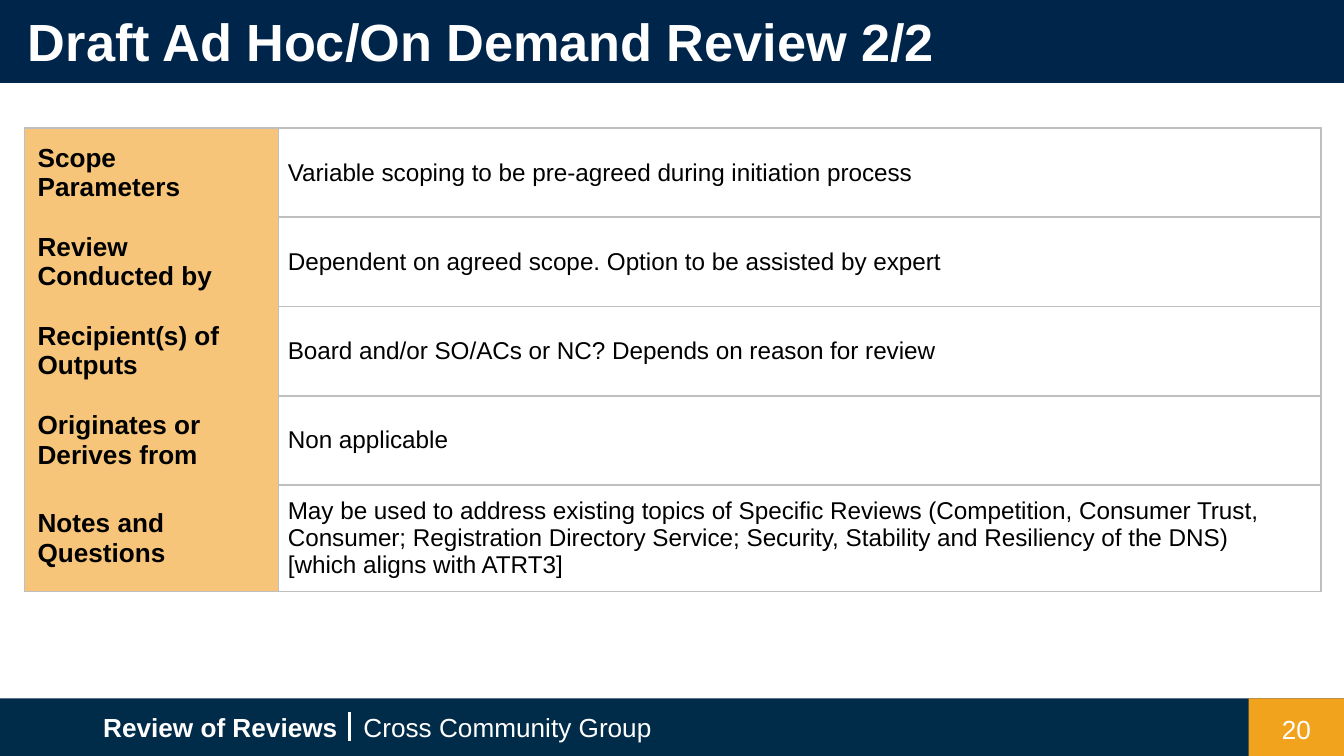
from dataclasses import dataclass

import pptx
import pptx.dml.color
import pptx.enum.shapes
import pptx.enum.text
import pptx.oxml
import pptx.oxml.ns
import pptx.util
from pptx.util import Cm

COLORS = {
    "header": "00254A",
    "footer": "002B49",
    "accent": "F1A31E",
    "label": "F7C579",
    "border": "BFBFBF",
    "white": "FFFFFF",
    "black": "000000",
}
FONT = "Arial"
MIDDLE = pptx.enum.text.MSO_ANCHOR.MIDDLE
LEFT = pptx.enum.text.PP_ALIGN.LEFT
CENTER = pptx.enum.text.PP_ALIGN.CENTER
PLAIN_TABLE = "{2D5ABB26-0587-4C30-8999-92F81FD0307C}"


@dataclass
class Band:
    x: float
    y: float
    w: float
    h: float
    color: str


@dataclass
class Label:
    x: float
    y: float
    w: float
    h: float
    text: str
    size: float = 14
    bold: bool = False
    align: int = LEFT


@dataclass
class Row:
    height: float
    label: str
    details: list[str]


BANDS = [
    Band(0, 13.2, 25.4, 1.1, "footer"),
    Band(23.6, 13.2, 1.8, 1.1, "accent"),
    Band(0, 0, 25.4, 1.57, "header"),
]
LABELS = [
    Label(1.7, 13.18, 5.08, 1.12, "Review of Reviews", bold=True),
    Label(6.62, 13.18, 6.38, 1.12, "Cross Community Group"),
    Label(23.6, 13.23, 1.8, 1.1, "20", align=CENTER),
    Label(0.28, 0, 24.97, 1.52, "Draft Ad Hoc/On Demand Review 2/2", 28, True),
]
ROWS = [
    Row(1.62, "Scope Parameters",
        ["Variable scoping to be pre-agreed during initiation process"]),
    Row(1.62, "Review Conducted by",
        ["Dependent on agreed scope. Option to be assisted by expert"]),
    Row(1.62, "Recipient(s) of Outputs",
        ["Board and/or SO/ACs or NC? Depends on reason for review"]),
    Row(1.62, "Originates or Derives from", ["Non applicable"]),
    Row(1.89, "Notes and Questions",
        ["May be used to address existing topics of Specific Reviews "
         "(Competition, Consumer Trust, Consumer; Registration Directory "
         "Service; Security, Stability and Resiliency of the DNS)",
         "[which aligns with ATRT3]"]),
]
COLUMNS = [4.8, 19.71]


def rgb(name: str) -> pptx.dml.color.RGBColor:
    return pptx.dml.color.RGBColor.from_string(COLORS[name])


def add_run(p, text: str, size: float, bold: bool, color: str) -> None:
    r = p.add_run()
    r.text = text
    r.font.name = FONT
    r.font.size = pptx.util.Pt(size)
    r.font.bold = bold
    r.font.color.rgb = rgb(color)


def draw_band(s, band: Band) -> None:
    sp = s.shapes.add_shape(pptx.enum.shapes.MSO_SHAPE.RECTANGLE,
                            Cm(band.x), Cm(band.y), Cm(band.w), Cm(band.h))
    sp.shadow.inherit = False
    sp.fill.solid()
    sp.fill.fore_color.rgb = rgb(band.color)
    sp.line.fill.background()


def draw_label(s, label: Label) -> None:
    sp = s.shapes.add_textbox(Cm(label.x), Cm(label.y), Cm(label.w), Cm(label.h))
    tf = sp.text_frame
    tf.word_wrap = True
    tf.vertical_anchor = MIDDLE
    tf.margin_left = tf.margin_right = Cm(0.25)
    tf.margin_top = tf.margin_bottom = Cm(0.13)
    p = tf.paragraphs[0]
    p.alignment = label.align
    add_run(p, label.text, label.size, label.bold, "white")


def draw_divider(s) -> None:
    line = s.shapes.add_connector(pptx.enum.shapes.MSO_CONNECTOR.STRAIGHT,
                                  Cm(6.6), Cm(13.46), Cm(6.6), Cm(14))
    line.line.color.rgb = rgb("white")
    line.line.width = pptx.util.Pt(1.5)
    pptx.oxml.ns.qn("a:effectLst")
    line._element.spPr.append(pptx.oxml.parse_xml(
        f'<a:effectLst {pptx.oxml.ns.nsdecls("a")}/>'))


def set_borders(cell, sides: str, width: float) -> None:
    tc_pr = cell._tc.get_or_add_tcPr()
    for side in "LRTB":
        fill = "<a:noFill/>"
        if side in sides:
            fill = f'<a:solidFill><a:srgbClr val="{COLORS["border"]}"/></a:solidFill>'
        tc_pr.append(pptx.oxml.parse_xml(
            f'<a:ln{side} {pptx.oxml.ns.nsdecls("a")} '
            f'w="{pptx.util.Pt(width)}">{fill}</a:ln{side}>'))


def fill_cell(cell, lines: list[str], size: float, bold: bool,
              margin: float, color: str) -> None:
    cell.fill.solid()
    cell.fill.fore_color.rgb = rgb(color)
    cell.vertical_anchor = MIDDLE
    cell.margin_left = cell.margin_right = Cm(margin)
    cell.margin_top = cell.margin_bottom = Cm(margin)
    tf = cell.text_frame
    for i, text in enumerate(lines):
        p = tf.add_paragraph() if i else tf.paragraphs[0]
        add_run(p, text, size, bold, "black")


def draw_table(s, rows: list[Row]) -> None:
    table = s.shapes.add_table(
        len(rows), len(COLUMNS), Cm(0.46), Cm(2.42),
        Cm(sum(COLUMNS)), Cm(sum(row.height for row in rows))).table
    table.first_row = table.horz_banding = False
    table._tbl.tblPr.find(pptx.oxml.ns.qn("a:tableStyleId")).text = PLAIN_TABLE
    for column, width in zip(table.columns, COLUMNS):
        column.width = Cm(width)
    for i, row in enumerate(rows):
        table.rows[i].height = Cm(row.height)
        label, detail = table.cell(i, 0), table.cell(i, 1)
        top = "T" if i == 0 else ""
        bottom = "B" if i == len(rows) - 1 else ""
        set_borders(label, "LR" + top + bottom, 0.75)
        set_borders(detail, "LRTB", 1)
        fill_cell(label, [row.label], 14, True, 0.25, "label")
        fill_cell(detail, row.details, 13, False, 0.18, "white")


def main() -> None:
    prs = pptx.Presentation()
    prs.slide_width, prs.slide_height = Cm(25.4), Cm(14.29)
    s = prs.slides.add_slide(prs.slide_layouts[6])
    for band in BANDS:
        draw_band(s, band)
    for label in LABELS:
        draw_label(s, label)
    draw_divider(s)
    draw_table(s, ROWS)
    prs.save("out.pptx")


if __name__ == "__main__":
    main()
